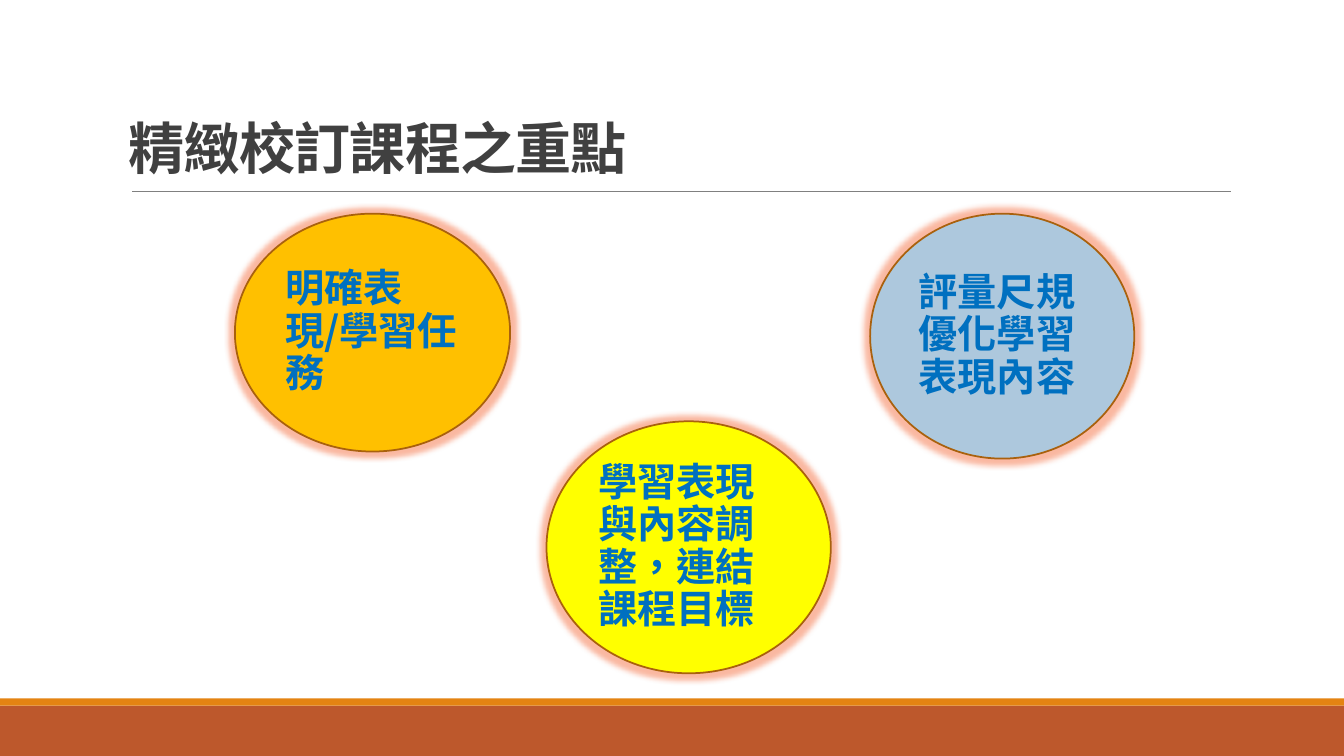
from lxml import etree
from pptx import Presentation, util as u
from pptx.dml.color import RGBColor
from pptx.enum import shapes, text
from pptx.oxml.ns import qn

WIDTH, HEIGHT = 13.33, 7.5
FONT, LANGUAGE = "Noto Sans CJK SC", "zh-TW"
TITLE = "精緻校訂課程之重點"
TITLE_BOX = (1.18, 1.18, 10.79, 0.78)
RULE_LEFT, RULE_RIGHT, RULE_Y = 1.31, 12.21, 1.9
BAND_TOP, STRIPE = 7, 0.07
BANDS = [  # top, height, fill
    (BAND_TOP, HEIGHT - BAND_TOP, "BD582C"),
    (BAND_TOP - STRIPE, STRIPE, "E48312"),
]
FOCUS_POINTS = [  # words, (left, top, width, height), fill
    ("明確表現/學習任務", (2.33, 2.12, 2.73, 2.36), "FFC000"),
    ("評量尺規優化學習表現內容", (8.63, 2.12, 2.62, 2.43), "ADC8DD"),
    ("學習表現與內容調整，連結課程目標", (5.42, 4.18, 2.82, 2.5), "FFFF00"),
]
OUTLINE, GLOW, GLOW_RADIUS, GLOW_ALPHA = "A9610D", "F4622F", 8, 45


def rgb(value):
    return RGBColor.from_string(value)


def inches(*lengths):
    return [u.Inches(n) for n in lengths]


def write(sp, words, size, color, spacing, anchor, kerning=0):
    tf = sp.text_frame
    tf.word_wrap = True
    tf.vertical_anchor = anchor
    p = tf.paragraphs[0]
    p.alignment = text.PP_ALIGN.LEFT
    p.line_spacing = spacing
    r = p.add_run()
    r.text = words
    r.font.size, r.font.bold, r.font.name = u.Pt(size), True, FONT
    r.font.color.rgb = rgb(color)
    props = r.font._element
    props.set("lang", LANGUAGE)
    etree.SubElement(props, qn("a:ea")).set("typeface", FONT)
    if kerning:
        props.set("spc", str(int(kerning * 100)))


def add_filled(kind, box, fill, outline=None):
    sp = s.shapes.add_shape(kind, *inches(*box))
    sp.shadow.inherit = False
    sp.fill.solid()
    sp.fill.fore_color.rgb = rgb(fill)
    if outline:
        sp.line.color.rgb = rgb(outline)
        sp.line.width = u.Pt(1.25)
    else:
        sp.line.fill.background()
    return sp


def add_glow(sp):
    effects = sp.element.spPr.find(qn("a:effectLst"))
    glow = etree.SubElement(effects, qn("a:glow"), rad=str(u.Pt(GLOW_RADIUS)))
    color = etree.SubElement(glow, qn("a:srgbClr"), val=GLOW)
    etree.SubElement(color, qn("a:alpha"), val=str(GLOW_ALPHA * 1000))


prs = Presentation()
prs.slide_width, prs.slide_height = inches(WIDTH, HEIGHT)
s = prs.slides.add_slide(prs.slide_layouts[6])

for top, height, fill in BANDS:
    add_filled(shapes.MSO_SHAPE.RECTANGLE, (0, top, WIDTH, height), fill)

rule = s.shapes.add_connector(
    shapes.MSO_CONNECTOR.STRAIGHT, *inches(RULE_LEFT, RULE_Y, RULE_RIGHT, RULE_Y))
rule.line.color.rgb = rgb("808080")
rule.line.width = u.Pt(0.5)
etree.SubElement(rule.element.spPr, qn("a:effectLst"))

write(s.shapes.add_textbox(*inches(*TITLE_BOX)), TITLE, 40, "404040", 0.85,
      text.MSO_ANCHOR.TOP, kerning=-0.5)

for words, box, fill in FOCUS_POINTS:
    oval = add_filled(shapes.MSO_SHAPE.OVAL, box, fill, OUTLINE)
    add_glow(oval)
    write(oval, words, 28, "0070C0", 0.9, text.MSO_ANCHOR.MIDDLE)

prs.save("out.pptx")
